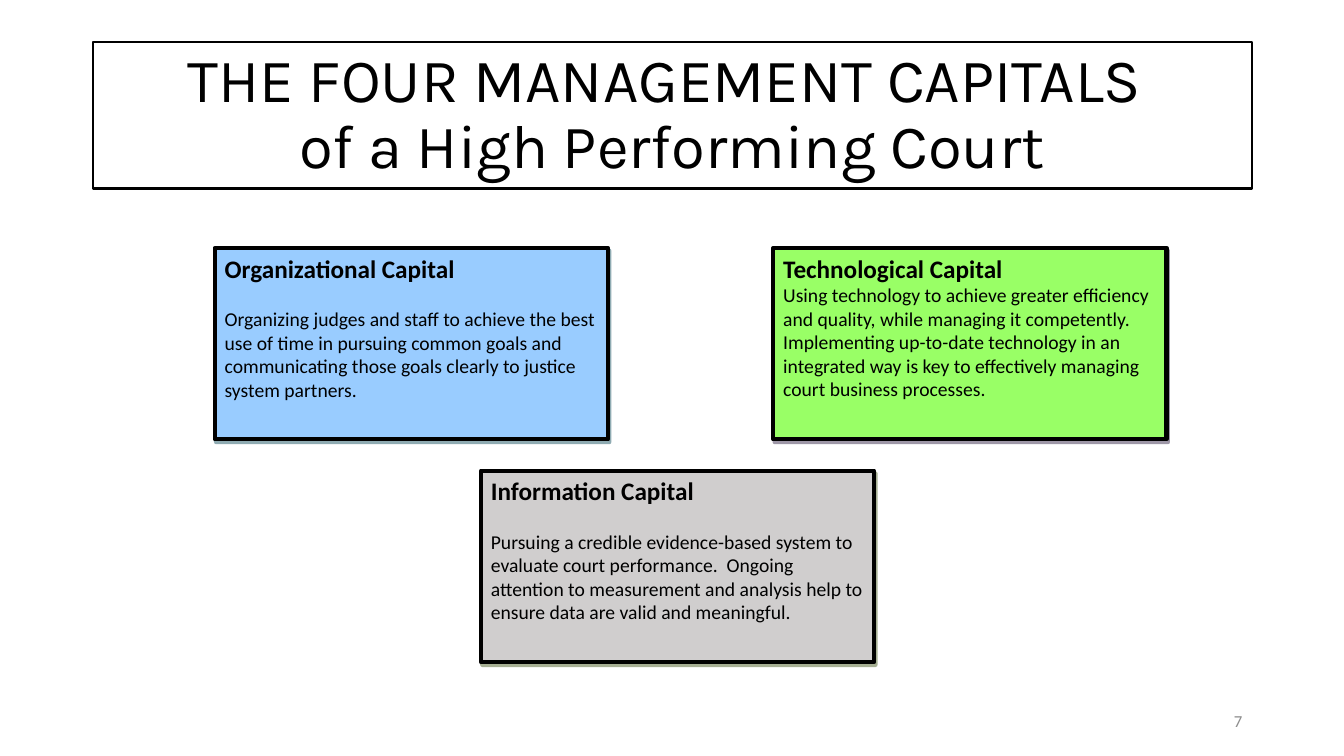
from lxml import etree
from pptx import Presentation
from pptx.dml.color import RGBColor
from pptx.enum.shapes import MSO_SHAPE
from pptx.enum.text import MSO_ANCHOR, MSO_AUTO_SIZE, PP_ALIGN
from pptx.oxml.ns import qn
from pptx.util import Inches, Pt

RECTANGLE = MSO_SHAPE.RECTANGLE
TOP, MIDDLE = MSO_ANCHOR.TOP, MSO_ANCHOR.MIDDLE
LEFT, CENTER, RIGHT = PP_ALIGN.LEFT, PP_ALIGN.CENTER, PP_ALIGN.RIGHT
NO_AUTOFIT = MSO_AUTO_SIZE.NONE
TITLE_ONLY = 5
BLACK, WHITE, GRAY = "000000", "FFFFFF", "8C8C8C"
CARD_WIDTH, CARD_HEIGHT = 3.9, 1.9
BLANK_LINE = 17

CAPITALS = [
    (2.13, 2.46, "99CCFF", "205867", BLANK_LINE, "Organizational Capital",
     "Organizing judges and staff to achieve the best use of time in pursuing "
     "common goals and communicating those goals clearly to justice system partners."),
    (7.67, 2.46, "99FF66", "3F3151", 0, "Technological Capital",
     "Using technology to achieve greater efficiency and quality, while managing it "
     "competently.  Implementing up-to-date technology in an integrated way is key to "
     "effectively managing court business processes."),
    (4.77, 4.67, "D0CECE", "4E6128", BLANK_LINE, "Information Capital",
     "Pursuing a credible evidence-based system to evaluate court performance.  Ongoing "
     "attention to measurement and analysis help to ensure data are valid and meaningful."),
]


def color(value):
    """Return the colour for a hex string."""
    return RGBColor.from_string(value)


def write(para, text, size, font="Calibri", ink=BLACK, bold=False,
          align=LEFT, spacing=1.0, before=0):
    """Fill a paragraph with formatted text."""
    para.text = text
    para.alignment = align
    para.line_spacing = spacing
    para.space_before = Pt(before)
    for span in para.runs:
        span.font.name = font
        span.font.size = Pt(size)
        span.font.bold = bold
        span.font.color.rgb = color(ink)


def prepare_frame(box, anchor):
    """Set wrapping and anchoring, and return the text frame."""
    frame = box.text_frame
    frame.word_wrap = True
    frame.auto_size = NO_AUTOFIT
    frame.vertical_anchor = anchor
    return frame


def paint(box, fill, width):
    """Give a box a solid fill and a black outline."""
    box.fill.solid()
    box.fill.fore_color.rgb = color(fill)
    box.line.color.rgb = color(BLACK)
    box.line.width = Pt(width)


def cast_shadow(box, shade):
    """Add a hard, half-transparent offset shadow."""
    box.shadow.inherit = False
    effects = box._element.spPr.find(qn("a:effectLst"))
    shadow = etree.SubElement(effects, qn("a:outerShdw"), blurRad="0",
                              dist=str(Pt(2.2)), dir=str(63 * 60000),
                              algn="ctr", rotWithShape="0")
    tint = etree.SubElement(shadow, qn("a:srgbClr"), val=shade)
    etree.SubElement(tint, qn("a:alpha"), val="50000")


def add_title(page):
    """Place the framed two-line title."""
    title = page.shapes.title
    title.left, title.top = Inches(0.92), Inches(0.42)
    title.width, title.height = Inches(11.5), Inches(1.45)
    paint(title, WHITE, 1.5)
    frame = prepare_frame(title, MIDDLE)
    write(frame.paragraphs[0],
          "THE FOUR MANAGEMENT CAPITALS \vof a High Performing Court",
          44, font="Karla", align=CENTER, spacing=0.9)


def add_card(page, left, top, fill, shade, gap, heading, body):
    """Draw one capital with its heading and description."""
    card = page.shapes.add_shape(RECTANGLE, Inches(left), Inches(top),
                                 Inches(CARD_WIDTH), Inches(CARD_HEIGHT))
    paint(card, fill, 3)
    cast_shadow(card, shade)
    frame = prepare_frame(card, TOP)
    write(frame.paragraphs[0], heading, 18, bold=True)
    write(frame.add_paragraph(), body, 14, before=gap)


def add_page_number(page, number):
    """Write the page number at the lower right."""
    box = page.shapes.add_textbox(Inches(9.42), Inches(6.95), Inches(3), Inches(0.4))
    frame = prepare_frame(box, MIDDLE)
    write(frame.paragraphs[0], number, 12, ink=GRAY, align=RIGHT)


def main():
    """Build and save the slide."""
    deck = Presentation()
    deck.slide_width, deck.slide_height = Inches(13.33), Inches(7.5)
    page = deck.slides.add_slide(deck.slide_layouts[TITLE_ONLY])
    add_title(page)
    for capital in CAPITALS:
        add_card(page, *capital)
    add_page_number(page, "7")
    deck.save("out.pptx")


if __name__ == "__main__":
    main()
